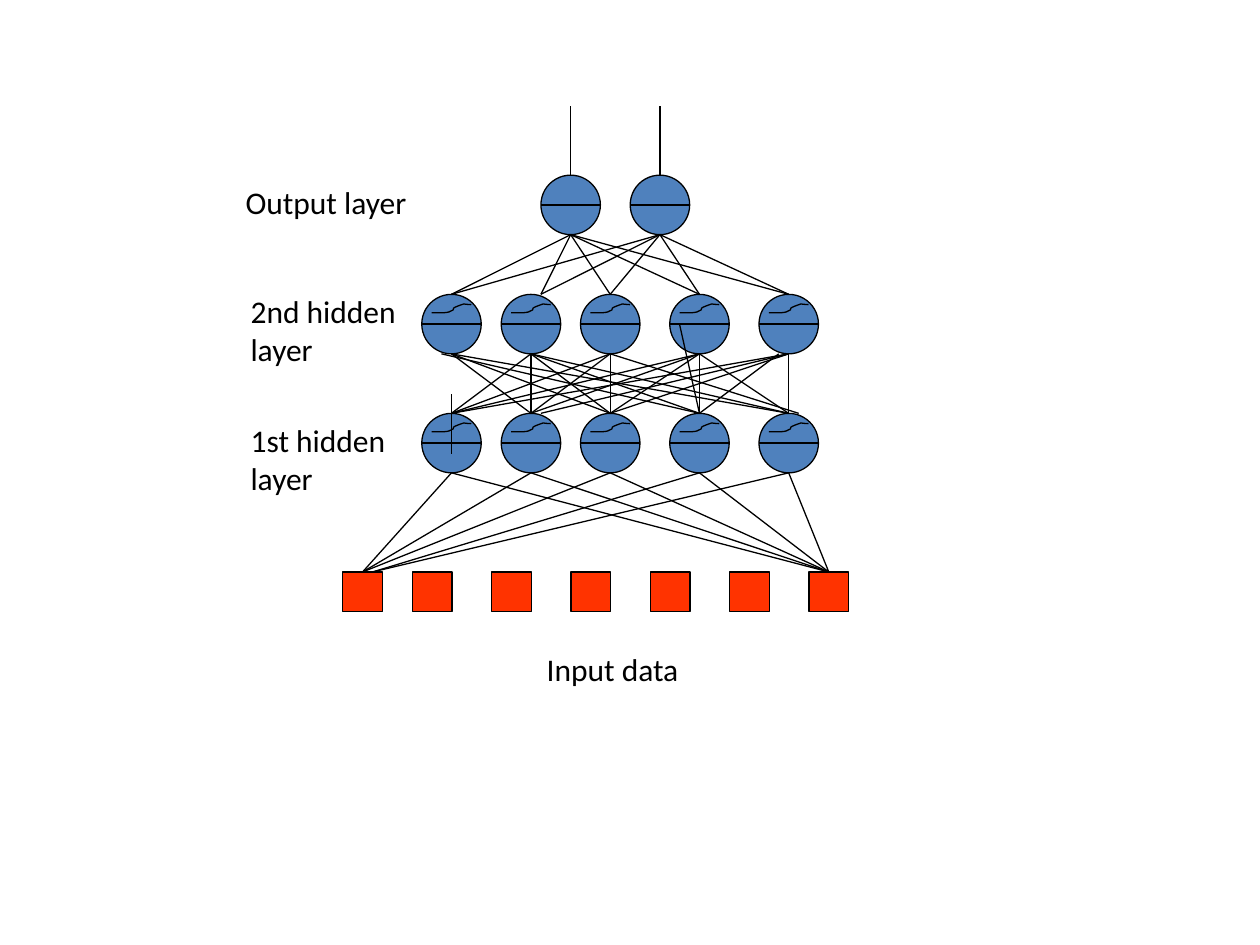
"""Draw a feed-forward neural network with two hidden layers."""
import pptx
import pptx.dml.color
import pptx.enum.shapes
import pptx.enum.text
import pptx.oxml.ns
import pptx.util
from lxml import etree

Pt = pptx.util.Pt
qn = pptx.oxml.ns.qn
SHAPES = pptx.enum.shapes.MSO_SHAPE

BLACK, NEURON_BLUE, INPUT_RED = "000000", "4F81BD", "FF3300"
NEURON_SIZE, INPUT_SIZE = 34, 22.7
NUDGE = 5.7
HIDDEN_X = [258, 303.4, 348.7, 399.7, 450.7]
OUTPUT_X = [326.1, 377.1]
INPUT_X = [207.2] + [247 + 45.32 * i for i in range(6)]
OUTPUT_Y, HIDDEN2_Y, HIDDEN1_Y, INPUT_Y = 117.1, 185.2, 253.2, 338.2
SIGMOID = [
    (-11.3, -6.5),
    (-6.7, -6.5), (-1.7, -5.9), (1, -8.1),
    (1, -8.8), (1.2, -9.5), (2, -9.6),
    (3.4, -10.3), (7, -11.5), (7, -11.5),
    (8.4, -11.2), (11.3, -11.1), (11.3, -11.1),
]


def rgb(value):
    """Return the colour for a hex string."""
    return pptx.dml.color.RGBColor.from_string(value)


def outline(item):
    """Give a shape or connector the thin black line."""
    item.line.color.rgb = rgb(BLACK)
    item.line.width = Pt(0.75)


def add_node(slide, kind, x, y, size, color):
    """Add a filled node centred on a point."""
    node = slide.shapes.add_shape(
        kind, Pt(x - size / 2), Pt(y - size / 2), Pt(size), Pt(size))
    node.shadow.inherit = False
    node.fill.solid()
    node.fill.fore_color.rgb = rgb(color)
    outline(node)
    return node


def add_layer(slide, kind, centers, y, size, color):
    """Add one row of nodes."""
    return [add_node(slide, kind, x, y, size, color) for x in centers]


def add_line(slide, x1, y1, x2, y2):
    """Add a straight line between two points."""
    line = slide.shapes.add_connector(
        pptx.enum.shapes.MSO_CONNECTOR.STRAIGHT, Pt(x1), Pt(y1), Pt(x2), Pt(y2))
    outline(line)
    etree.SubElement(line._element.spPr, qn("a:effectLst"))
    return line


def add_link(slide, lower, upper, lower_shift=0, upper_shift=0):
    """Link the top of a lower node to the bottom of an upper one."""
    line = add_line(
        slide,
        (lower.left + lower.width / 2) / Pt(1) + lower_shift, lower.top / Pt(1),
        (upper.left + upper.width / 2) / Pt(1) + upper_shift,
        (upper.top + upper.height) / Pt(1))
    if not lower_shift:
        line.begin_connect(lower, 0)


def add_midlines(slide, centers, y):
    """Divide each neuron of a layer in half."""
    for x in centers:
        add_line(slide, x - NEURON_SIZE / 2, y, x + NEURON_SIZE / 2, y)


def add_sigmoid(slide, x, y):
    """Add the activation curve of the neuron centred on a point."""
    points = [(Pt(x + dx), Pt(y + dy)) for dx, dy in SIGMOID]
    builder = slide.shapes.build_freeform(*points[0], scale=1.0)
    builder.add_line_segments(points[1:], close=False)
    curve = builder.convert_to_shape()
    curve.shadow.inherit = False
    curve.fill.background()
    outline(curve)
    strokes = curve._element.find(".//" + qn("a:path"))
    segments = strokes.findall(qn("a:lnTo"))
    for start in range(0, len(segments), 3):
        bezier = etree.SubElement(strokes, qn("a:cubicBezTo"))
        for segment in segments[start:start + 3]:
            bezier.append(segment[0])
            strokes.remove(segment)


def add_label(slide, text, x, y, width, height, size=18, font="Calibri",
              color=BLACK, wrap=True):
    """Add a text label, one paragraph for each line."""
    frame = slide.shapes.add_textbox(Pt(x), Pt(y), Pt(width), Pt(height)).text_frame
    frame.word_wrap = wrap
    frame.auto_size = pptx.enum.text.MSO_AUTO_SIZE.SHAPE_TO_FIT_TEXT
    frame.text = text
    for paragraph in frame.paragraphs:
        paragraph.font.size = Pt(size)
        paragraph.font.name = font
        paragraph.font.color.rgb = rgb(color)


def link_output(slide, hidden2, outputs):
    """Link the second hidden layer to the output layer."""
    for output in outputs:
        for i, neuron in enumerate(hidden2):
            add_link(slide, neuron, output, NUDGE if i == 1 else 0)


def link_hidden(slide, hidden1, hidden2):
    """Link the two hidden layers."""
    lower_shifts = {(1, 4): NUDGE, (4, 2): NUDGE}
    upper_shifts = {(3, 0): -NUDGE, (3, 4): -NUDGE}
    for i, lower in enumerate(hidden1):
        for j, upper in enumerate(hidden2):
            pair = (i, j)
            if pair not in [(0, 0), (3, 2)]:
                add_link(slide, lower, upper,
                         lower_shifts.get(pair, 0), upper_shifts.get(pair, 0))
    add_line(slide, HIDDEN_X[0], 259.3, HIDDEN_X[0], 225.3)
    add_line(slide, 388.3, HIDDEN2_Y, HIDDEN_X[3], HIDDEN1_Y - NEURON_SIZE / 2)


def link_inputs(slide, inputs, hidden1):
    """Link the outermost inputs to the first hidden layer."""
    for i, neuron in enumerate(hidden1):
        add_link(slide, inputs[0], neuron, NUDGE if i > 2 else 0)
        add_link(slide, inputs[-1], neuron)


def main():
    """Build the network slide and save it."""
    deck = pptx.Presentation()
    deck.slide_width, deck.slide_height = Pt(720), Pt(540)
    slide = deck.slides.add_slide(deck.slide_layouts[6])

    neuron = (NEURON_SIZE, NEURON_BLUE)
    hidden1 = add_layer(slide, SHAPES.OVAL, HIDDEN_X, HIDDEN1_Y, *neuron)
    hidden2 = add_layer(slide, SHAPES.OVAL, HIDDEN_X, HIDDEN2_Y, *neuron)
    inputs = add_layer(slide, SHAPES.RECTANGLE, INPUT_X, INPUT_Y, INPUT_SIZE, INPUT_RED)
    outputs = add_layer(slide, SHAPES.OVAL, OUTPUT_X, OUTPUT_Y, *neuron)

    link_output(slide, hidden2, outputs)
    link_inputs(slide, inputs, hidden1)
    for x in OUTPUT_X:
        add_line(slide, x, OUTPUT_Y - NEURON_SIZE / 2, x, 60.4)
    add_midlines(slide, HIDDEN_X, HIDDEN1_Y)
    add_midlines(slide, HIDDEN_X, HIDDEN2_Y)
    link_hidden(slide, hidden1, hidden2)
    for y in (HIDDEN2_Y, HIDDEN1_Y):
        for x in HIDDEN_X:
            add_sigmoid(slide, x, y)

    add_label(slide, "1st hidden\nlayer", 136.1, 236.9, 121.7, 50.4)
    add_label(slide, "2nd hidden\nlayer", 136.1, 163.4, 121.7, 50.4)
    add_label(slide, "Output layer", 133.2, 100.8, 121.7, 28.8)
    add_midlines(slide, OUTPUT_X, OUTPUT_Y)
    add_label(slide, "Input data", 305.3, 367.9, 94.3, 28.8, wrap=False)

    deck.save("out.pptx")


if __name__ == "__main__":
    main()
